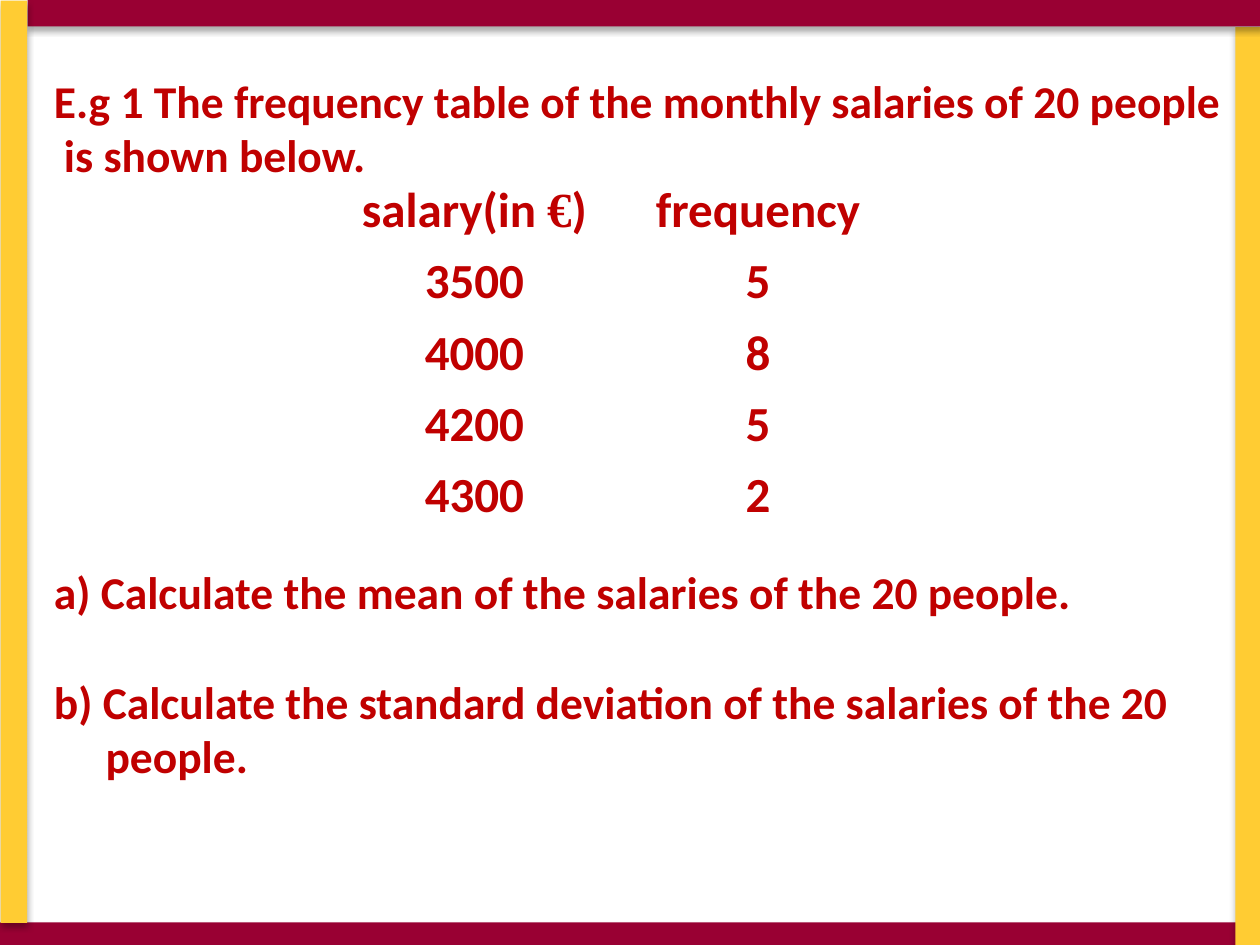
from lxml import etree
from pptx import Presentation
from pptx import util as u
from pptx.dml.color import RGBColor
from pptx.enum import shapes, text
from pptx.oxml.ns import qn

COLORS = {"maroon": "990033", "gold": "FFCC33", "red": "C00000", "shadow": "000000"}
BAR = 0.21
BARS = [  # left, top, length, rotation, colour
    (0, 7.32, 10, 0, "maroon"),
    (6.25, 3.77, 7.32, 90, "gold"),
    (0.22, 0, 9.8, 0, "maroon"),
    (-3.55, 3.56, 7.32, 90, "gold"),
]
LINES = [  # text, left margin and first-line indent in inches, space before in points
    ("E.g 1 The frequency table of the monthly salaries of 20 people", 0, 0, 0),
    ("is shown below.", 0.08, 0, 0),
    ("a) Calculate the mean of the salaries of the 20 people.", 0, 0, 218),
    ("b) Calculate the standard deviation of the salaries of the 20\vpeople.",
     0.41, -0.41, 31.7),
]
SALARIES = [("3500", "5"), ("4000", "8"), ("4200", "5"), ("4300", "2")]


def add_run(p, words, size, font="Calibri"):
    r = p.add_run()
    r.text = words
    r.font.name, r.font.size, r.font.bold = font, u.Pt(size), True
    r.font.color.rgb = RGBColor.from_string(COLORS["red"])


def add_shadow(s):
    """Soft shadow straight below the shape."""
    s.shadow.inherit = False
    effects = s._element.spPr.find(qn("a:effectLst"))
    outer = etree.SubElement(effects, qn("a:outerShdw"), blurRad=str(u.Pt(3.5)),
                             dist=str(u.Pt(2.2)), dir="5400000", rotWithShape="0")
    color = etree.SubElement(outer, qn("a:srgbClr"), val=COLORS["shadow"])
    etree.SubElement(color, qn("a:alpha"), val="32000")


def add_bar(slide, left, top, length, rotation, color):
    s = slide.shapes.add_shape(shapes.MSO_SHAPE.RECTANGLE, u.Inches(left), u.Inches(top),
                               u.Inches(length), u.Inches(BAR))
    s.rotation = rotation
    s.fill.solid()
    s.fill.fore_color.rgb = RGBColor.from_string(COLORS[color])
    s.line.fill.background()
    add_shadow(s)


def add_question(slide):
    box = slide.shapes.add_textbox(u.Inches(0.33), u.Inches(0.5), u.Inches(9.57), u.Inches(5.79))
    tf = box.text_frame
    tf.word_wrap = True
    tf.vertical_anchor = text.MSO_ANCHOR.MIDDLE
    for i, (words, margin, indent, before) in enumerate(LINES):
        p = tf.add_paragraph() if i else tf.paragraphs[0]
        p.space_before = u.Pt(before)
        pPr = p._p.get_or_add_pPr()
        pPr.set("marL", str(u.Inches(margin)))
        pPr.set("indent", str(u.Inches(indent)))
        for j, part in enumerate(words.split("\v")):
            if j:
                p.add_line_break()
            add_run(p, part, 26)


def fill_cell(cell, runs):
    cell.fill.background()
    cell.vertical_anchor = text.MSO_ANCHOR.MIDDLE
    cell.margin_top = cell.margin_bottom = u.Inches(0.04)
    p = cell.text_frame.paragraphs[0]
    p.alignment = text.PP_ALIGN.CENTER
    for words, font in runs:
        add_run(p, words, 28, font)


def add_salary_table(slide):
    table = slide.shapes.add_table(len(SALARIES) + 1, 2, u.Inches(2.64), u.Inches(1.39),
                                   u.Inches(4.5), u.Inches(2.83)).table
    table.first_row = table.horz_banding = False
    header = [[("salary(in ", "Calibri"), ("€", "Times New Roman"), (")", "Calibri")],
              [("frequency", "Calibri")]]
    body = [[[(value, "Calibri")] for value in row] for row in SALARIES]
    for i, row in enumerate([header] + body):
        for j, runs in enumerate(row):
            fill_cell(table.cell(i, j), runs)


def main():
    prs = Presentation()
    prs.slide_width, prs.slide_height = u.Inches(10), u.Inches(7.5)
    slide = prs.slides.add_slide(prs.slide_layouts[6])
    for bar in BARS:
        add_bar(slide, *bar)
    add_question(slide)
    add_salary_table(slide)
    prs.save("out.pptx")


if __name__ == "__main__":
    main()
